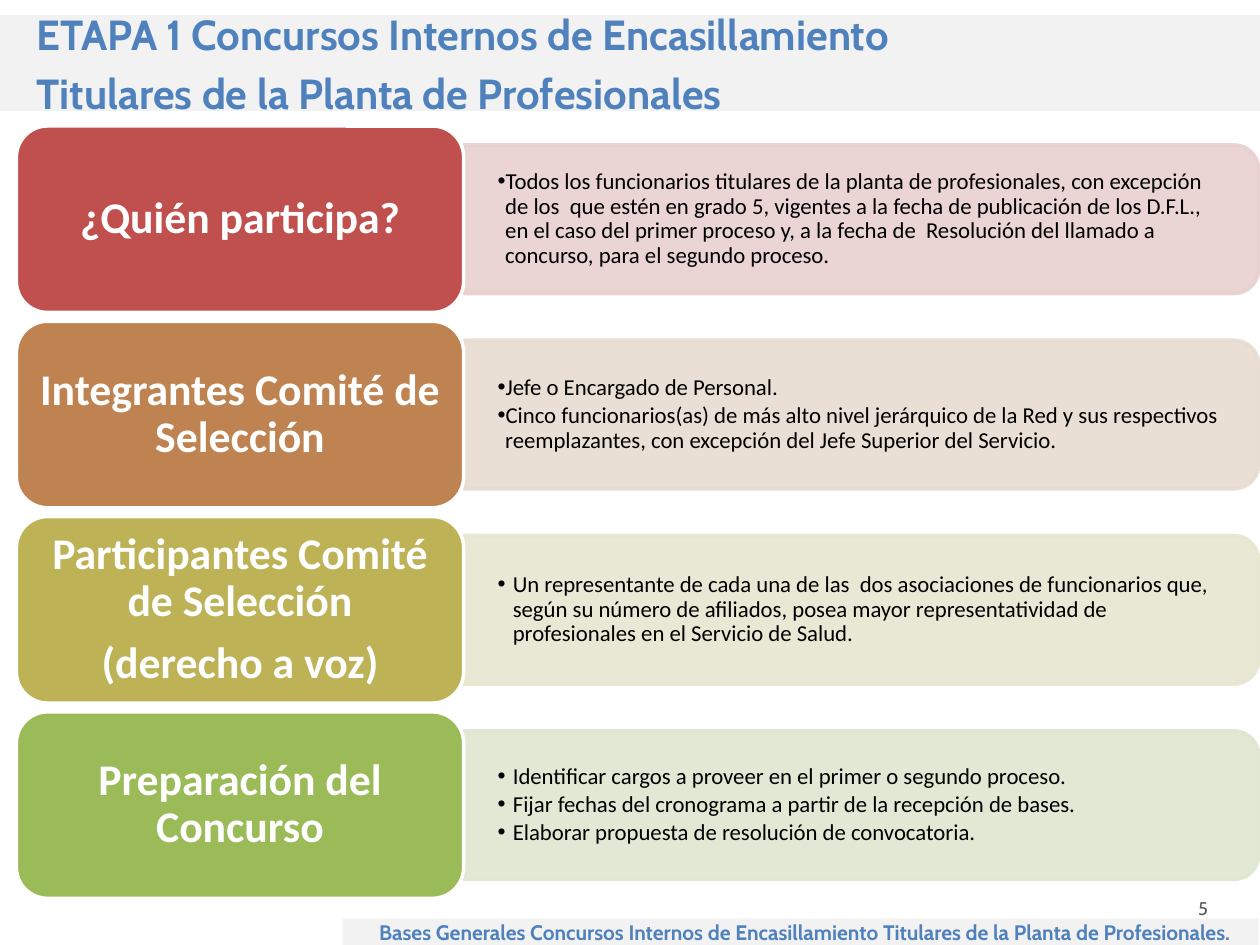
from lxml.etree import SubElement as Sub
from pptx import Presentation
from pptx.dml.color import RGBColor as RGB
from pptx.enum.shapes import MSO_SHAPE as SHAPE
from pptx.enum.text import MSO_ANCHOR as ANCHOR, MSO_AUTO_SIZE as AUTO, PP_ALIGN as ALIGN
from pptx.oxml.ns import qn
from pptx.util import Inches, Pt

COLORS = {"title": "4F81BD", "strip": "F2F2F2", "number": "595959",
          "white": "FFFFFF", "black": "000000"}
TITLE = ["ETAPA 1 Concursos Internos de Encasillamiento",
         "Titulares de la Planta de Profesionales"]
FOOTER = ["Bases Generales Concursos Internos de Encasillamiento "
          "Titulares de la Planta de Profesionales."]
ROWS = [
    {"head": ["¿Quién participa?"], "card": "C0504D", "band": "E8D0D0", "hang": 0.06,
     "items": ["Todos los funcionarios titulares de la planta de profesionales, con "
               "excepción de los  que estén en grado 5, vigentes a la fecha de "
               "publicación de los D.F.L., en el caso del primer proceso y, a la fecha "
               "de  Resolución del llamado a concurso, para el segundo proceso."]},
    {"head": ["Integrantes Comité de Selección"], "card": "BE8351", "band": "E8DCD0",
     "hang": 0.06,
     "items": ["Jefe o Encargado de Personal.",
               "Cinco funcionarios(as) de más alto nivel jerárquico de la Red y sus "
               "respectivos reemplazantes, con excepción del Jefe Superior del Servicio."]},
    {"head": ["Participantes Comité de Selección", "(derecho a voz)"], "card": "BDB255",
     "band": "E7E6D1", "hang": 0.12,
     "items": ["Un representante de cada una de las  dos asociaciones de funcionarios que, "
               "según su número de afiliados, posea mayor representatividad de "
               "profesionales en el Servicio de Salud."]},
    {"head": ["Preparación del Concurso"], "card": "9BBB59", "band": "DEE7D1", "hang": 0.12,
     "items": ["Identificar cargos a proveer en el primer o segundo proceso.",
               "Fijar fechas del cronograma a partir de la recepción de bases.",
               "Elaborar propuesta de resolución de convocatoria."]},
]
TOP, STEP, CARD_H = 1, 1.55, 1.48
BAND_W, BAND_H, BODY_H = 6.31, 1.18, 1.07
BAND_X = 3.68


def place(shape, left, top, width, height):
    shape.left, shape.top = Inches(left), Inches(top)
    shape.width, shape.height = Inches(width), Inches(height)


def paint(shape, fill, line=None, alpha=None):
    shape.fill.solid()
    shape.fill.fore_color.rgb = RGB.from_string(fill)
    if line:
        shape.line.width = Pt(2)
        shape.line.color.rgb = RGB.from_string(line)
    else:
        shape.line.fill.background()
    if alpha:
        for clr in shape.element.spPr.iter(qn("a:srgbClr")):
            Sub(clr, qn("a:alpha"), val=str(alpha * 1000))


def write(shape, lines, size, color, font="Calibri", bold=True, align=ALIGN.LEFT,
          inset=(0.1, 0.05), left=0, hang=0, lead=None, before=0, after=0):
    frame = shape.text_frame
    frame.word_wrap = True
    frame.auto_size = AUTO.NONE
    frame.vertical_anchor = ANCHOR.MIDDLE
    frame.margin_left = frame.margin_right = Inches(inset[0])
    frame.margin_top = frame.margin_bottom = Inches(inset[1])
    for n, line in enumerate(lines):
        para = frame.add_paragraph() if n else frame.paragraphs[0]
        para.text = line
        props = para._p.get_or_add_pPr()
        props.set("marL", str(Inches(left + hang)))
        props.set("indent", str(-Inches(hang)))
        if hang:
            Sub(props, qn("a:buFont"), typeface="Arial")
            Sub(props, qn("a:buChar"), char="•")
        else:
            Sub(props, qn("a:buNone"))
        para.alignment = align
        para.line_spacing = lead
        para.space_before = Pt(before if n else 0)
        para.space_after = Pt(after)
        para.font.name, para.font.size, para.font.bold = font, Pt(size), bold
        para.font.color.rgb = RGB.from_string(color)


def add(slide, kind, box):
    shape = slide.shapes.add_shape(kind, *map(Inches, box))
    shape.shadow.inherit = False
    return shape


def add_row(slide, row, body, top):
    mid = top + CARD_H / 2
    band = add(slide, SHAPE.ROUND_2_SAME_RECTANGLE,
               (BAND_X + (BAND_W - BAND_H) / 2, mid - BAND_W / 2, BAND_H, BAND_W))
    band.rotation = 90
    paint(band, row["band"], row["band"], 90)
    body.element.getparent().append(body.element)
    place(body, BAND_X, mid - BODY_H / 2, 6.25, BODY_H)
    write(body, row["items"], 13, COLORS["black"], bold=False, inset=(0.27, 0.14),
          hang=row["hang"], lead=0.9, after=2)
    card = add(slide, SHAPE.ROUNDED_RECTANGLE, (0.13, top, 3.55, CARD_H))
    paint(card, row["card"], COLORS["white"])
    write(card, row["head"], 25, COLORS["white"], align=ALIGN.CENTER, lead=0.9, after=8.75)


def main():
    """Build the slide on the first stage of the internal contests."""
    deck = Presentation()
    deck.slide_width, deck.slide_height = Inches(10), Inches(7.5)
    slide = deck.slides.add_slide(deck.slide_layouts.get_by_name("Comparison"))
    title, *bodies = slide.placeholders

    place(title, 0, 0.12, 10, 0.76)
    paint(title, COLORS["strip"])
    write(title, TITLE, 24, COLORS["title"], "Cabin", left=0.19, before=4.8)

    for n, (row, body) in enumerate(zip(ROWS, bodies)):
        add_row(slide, row, body, TOP + n * STEP)

    foot = add(slide, SHAPE.RECTANGLE, (2.72, 7.29, 7.27, 0.21))
    paint(foot, COLORS["strip"])
    write(foot, FOOTER, 12, COLORS["title"], "Cabin", left=0.19)

    page = slide.shapes.add_textbox(*map(Inches, (9.41, 7.06, 0.48, 0.29)))
    write(page, ["5"], 10.5, COLORS["number"], "Cabin", bold=False)
    deck.save("out.pptx")


if __name__ == "__main__":
    main()
